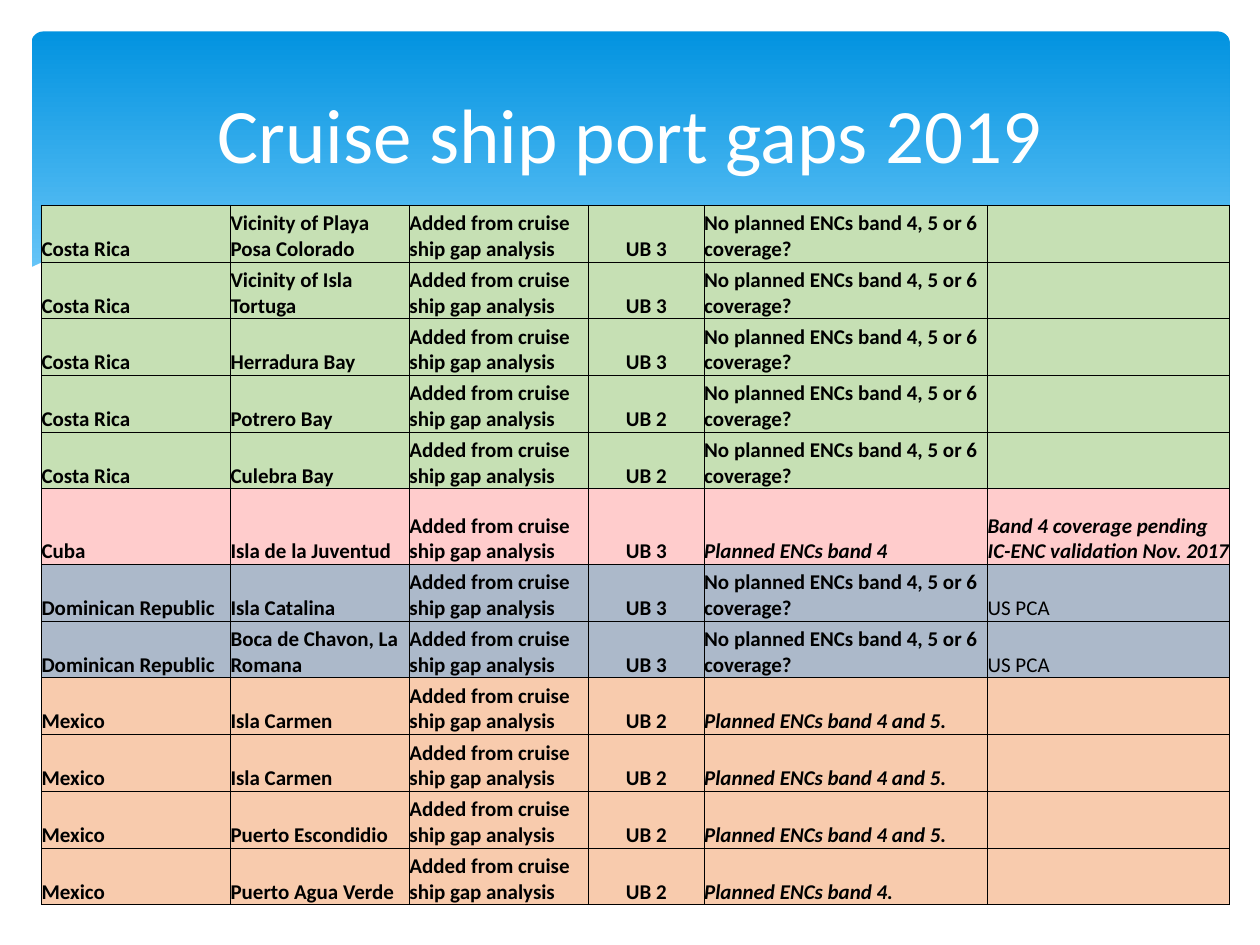
from dataclasses import dataclass
from typing import NamedTuple, Optional

from lxml.etree import SubElement
from pptx import Presentation
from pptx.dml.color import RGBColor
from pptx.enum.shapes import MSO_SHAPE
from pptx.enum.text import MSO_ANCHOR, PP_ALIGN
from pptx.oxml.ns import qn
from pptx.util import Inches, Pt

FONT = "Calibri"
COLORS = {
    "banner top": "0293E0", "banner bottom": "83D3FE", "mist": "C6E7FC",
    "white": "FFFFFF", "black": "000000",
    "Costa Rica": "C6E0B4", "Cuba": "FFCCCC",
    "Dominican Republic": "ACB9CA", "Mexico": "F8CBAD",
}
COLUMN_WIDTHS = [0.08, 1.5, 1.42, 1.42, 0.92, 2.25, 1.92]
ROW_HEIGHT, TALL_ROW_HEIGHT = 0.45, 0.6
REASON = "Added from cruise ship gap analysis"
UNPLANNED = "No planned ENCs band 4, 5 or 6 coverage?"
BOTH_BANDS = "Planned ENCs band 4 and 5."


@dataclass
class Wave:
    points: list
    fill: Optional[str] = None
    opacity: int = 100


class PortGap(NamedTuple):
    country: str
    port: str
    band: str
    plan: str = UNPLANNED
    remark: str = ""


WAVES = [
    Wave([(9.75, 2), (9.35, 2.07), (8.91, 2.16), (8.32, 2.3), (7.79, 2.43),
          (7.29, 2.53), (6.61, 2.65), (7.05, 2.71), (7.45, 2.75), (8.03, 2.78),
          (8.54, 2.76), (8.97, 2.7), (9.35, 2.62), (9.76, 2.47), (9.76, 2)],
         "mist", 29),
    Wave([(8.93, 2.73), (8.37, 2.65), (7.75, 2.54), (7.06, 2.4), (6.29, 2.22),
          (5.84, 2.11), (5.41, 2.03), (5.01, 1.96), (4.41, 1.89), (3.8, 1.86),
          (3.28, 1.87), (2.86, 1.91), (3.42, 1.99), (4.04, 2.11), (4.91, 2.32),
          (5.66, 2.48), (6.34, 2.61), (6.95, 2.7), (7.48, 2.76), (8.07, 2.79),
          (8.57, 2.77)], "mist", 40),
    Wave([(3.09, 1.95), (3.43, 1.9), (3.87, 1.87), (4.33, 1.87), (4.89, 1.9),
          (5.56, 1.97), (6.36, 2.08), (7.27, 2.26), (8.31, 2.51), (9.07, 2.72)]),
    Wave([(6.13, 2.57), (6.72, 2.41), (7.48, 2.23), (8.36, 2.04), (8.95, 1.94),
          (9.37, 1.88), (9.75, 1.85)]),
    Wave([(9.77, 2.46), (9.4, 2.59), (8.99, 2.69), (8.5, 2.75), (8.09, 2.77),
          (7.61, 2.75), (7.08, 2.7), (6.47, 2.62), (5.79, 2.5), (5.03, 2.33),
          (4.18, 2.13), (3.65, 2.02), (3.15, 1.94), (2.5, 1.86), (1.93, 1.84),
          (1.46, 1.85), (1.06, 1.89), (0.75, 1.95), (0.52, 2.01), (0.36, 2.07),
          (0.23, 2.13), (0.23, 3.29), (9.77, 3.29)], "white"),
]

PORT_GAPS = [
    PortGap("Costa Rica", "Vicinity of Playa Posa Colorado", "UB 3"),
    PortGap("Costa Rica", "Vicinity of Isla Tortuga", "UB 3"),
    PortGap("Costa Rica", "Herradura Bay", "UB 3"),
    PortGap("Costa Rica", "Potrero Bay", "UB 2"),
    PortGap("Costa Rica", "Culebra Bay", "UB 2"),
    PortGap("Cuba", "Isla de la Juventud", "UB 3", "Planned ENCs band 4",
            "Band 4 coverage pending IC-ENC validation Nov. 2017"),
    PortGap("Dominican Republic", "Isla Catalina", "UB 3", remark="US PCA"),
    PortGap("Dominican Republic", "Boca de Chavon, La Romana", "UB 3", remark="US PCA"),
    PortGap("Mexico", "Isla Carmen", "UB 2", BOTH_BANDS),
    PortGap("Mexico", "Isla Carmen", "UB 2", BOTH_BANDS),
    PortGap("Mexico", "Puerto Escondidio", "UB 2", BOTH_BANDS),
    PortGap("Mexico", "Puerto Agua Verde", "UB 2", "Planned ENCs band 4."),
]


def color(name: str) -> RGBColor:
    return RGBColor.from_string(COLORS[name])


def add_banner(slide) -> None:
    banner = slide.shapes.add_shape(MSO_SHAPE.ROUNDED_RECTANGLE, Inches(0.25),
                                    Inches(0.25), Inches(9.51), Inches(2.7))
    banner.adjustments[0] = 0.034
    banner.shadow.inherit = False
    banner.line.fill.background()
    banner.fill.gradient()
    banner.fill.gradient_angle = 270
    stops = banner.fill.gradient_stops
    for stop, position, name in zip(stops, (0, 0.9), ("banner top", "banner bottom")):
        stop.position = position
        stop.color.rgb = color(name)


def add_wave(slide, wave: Wave) -> None:
    """Draw a filled wave, or a hairline curve when it has no fill."""
    start, *rest = [(Inches(x), Inches(y)) for x, y in wave.points]
    builder = slide.shapes.build_freeform(*start)
    builder.add_line_segments(rest, close=wave.fill is not None)
    shape = builder.convert_to_shape()
    shape.shadow.inherit = False
    if wave.fill is None:
        shape.fill.background()
        shape.line.color.rgb = color("white")
        shape.line.width = Pt(0)
        return
    shape.line.fill.background()
    shape.fill.solid()
    shape.fill.fore_color.rgb = color(wave.fill)
    if wave.opacity < 100:
        fill_color = shape.element.spPr.find(qn("a:solidFill"))[0]
        SubElement(fill_color, qn("a:alpha"), val=str(wave.opacity * 1000))


def add_run(paragraph, text: str, size: int, name: str) -> "object":
    run = paragraph.add_run()
    run.text = text
    run.font.name = FONT
    run.font.size = Pt(size)
    run.font.color.rgb = color(name)
    return run


def set_title(slide, text: str) -> None:
    """Fill the title placeholder and bring it in front of the banner."""
    title = slide.shapes.title
    title.left, title.top, title.width, title.height = map(Inches, (0.5, 0.37, 9, 1.37))
    title.text_frame.vertical_anchor = MSO_ANCHOR.MIDDLE
    paragraph = title.text_frame.paragraphs[0]
    paragraph.alignment = PP_ALIGN.CENTER
    add_run(paragraph, text, 44, "white")
    title.element.getparent().append(title.element)


def set_borders(cell, visible: tuple) -> None:
    properties = cell._tc.get_or_add_tcPr()
    for side in ("lnL", "lnR", "lnT", "lnB"):
        line = SubElement(properties, qn(f"a:{side}"), w=str(Pt(0.5)))
        if side in visible:
            fill = SubElement(line, qn("a:solidFill"))
            SubElement(fill, qn("a:srgbClr"), val=COLORS["black"])
        else:
            SubElement(line, qn("a:noFill"))


def format_cell(cell, visible_borders: tuple, fill: Optional[str] = None) -> None:
    cell.margin_left = cell.margin_right = cell.margin_top = cell.margin_bottom = 0
    cell.vertical_anchor = MSO_ANCHOR.BOTTOM
    set_borders(cell, visible_borders)
    if fill is None:
        cell.fill.background()
    else:
        cell.fill.solid()
        cell.fill.fore_color.rgb = color(fill)


def fill_row(row, gap: PortGap) -> None:
    spacer, *cells = row.cells
    format_cell(spacer, ("lnR",))
    texts = (gap.country, gap.port, REASON, gap.band, gap.plan, gap.remark)
    for cell, text in zip(cells, texts):
        format_cell(cell, ("lnL", "lnR", "lnT", "lnB"), gap.country)
        if not text:
            continue
        paragraph = cell.text_frame.paragraphs[0]
        paragraph.alignment = PP_ALIGN.CENTER if text == gap.band else PP_ALIGN.LEFT
        run = add_run(paragraph, text, 12, "black")
        run.font.bold = text != "US PCA"
        run.font.italic = text.startswith(("Planned", "Band"))


def add_gap_table(slide) -> None:
    heights = [TALL_ROW_HEIGHT if gap.country == "Cuba" else ROW_HEIGHT
               for gap in PORT_GAPS]
    table = slide.shapes.add_table(
        len(PORT_GAPS), len(COLUMN_WIDTHS), Inches(0.25), Inches(1.63),
        Inches(sum(COLUMN_WIDTHS)), Inches(sum(heights))).table
    table.first_row = table.horz_banding = False
    for column, width in zip(table.columns, COLUMN_WIDTHS):
        column.width = Inches(width)
    for row, height, gap in zip(table.rows, heights, PORT_GAPS):
        row.height = Inches(height)
        fill_row(row, gap)


def main() -> None:
    presentation = Presentation()
    presentation.slide_width, presentation.slide_height = Inches(10), Inches(7.5)
    slide = presentation.slides.add_slide(presentation.slide_layouts[5])
    add_banner(slide)
    for wave in WAVES:
        add_wave(slide, wave)
    set_title(slide, "Cruise ship port gaps 2019")
    add_gap_table(slide)
    presentation.save("out.pptx")


if __name__ == "__main__":
    main()
